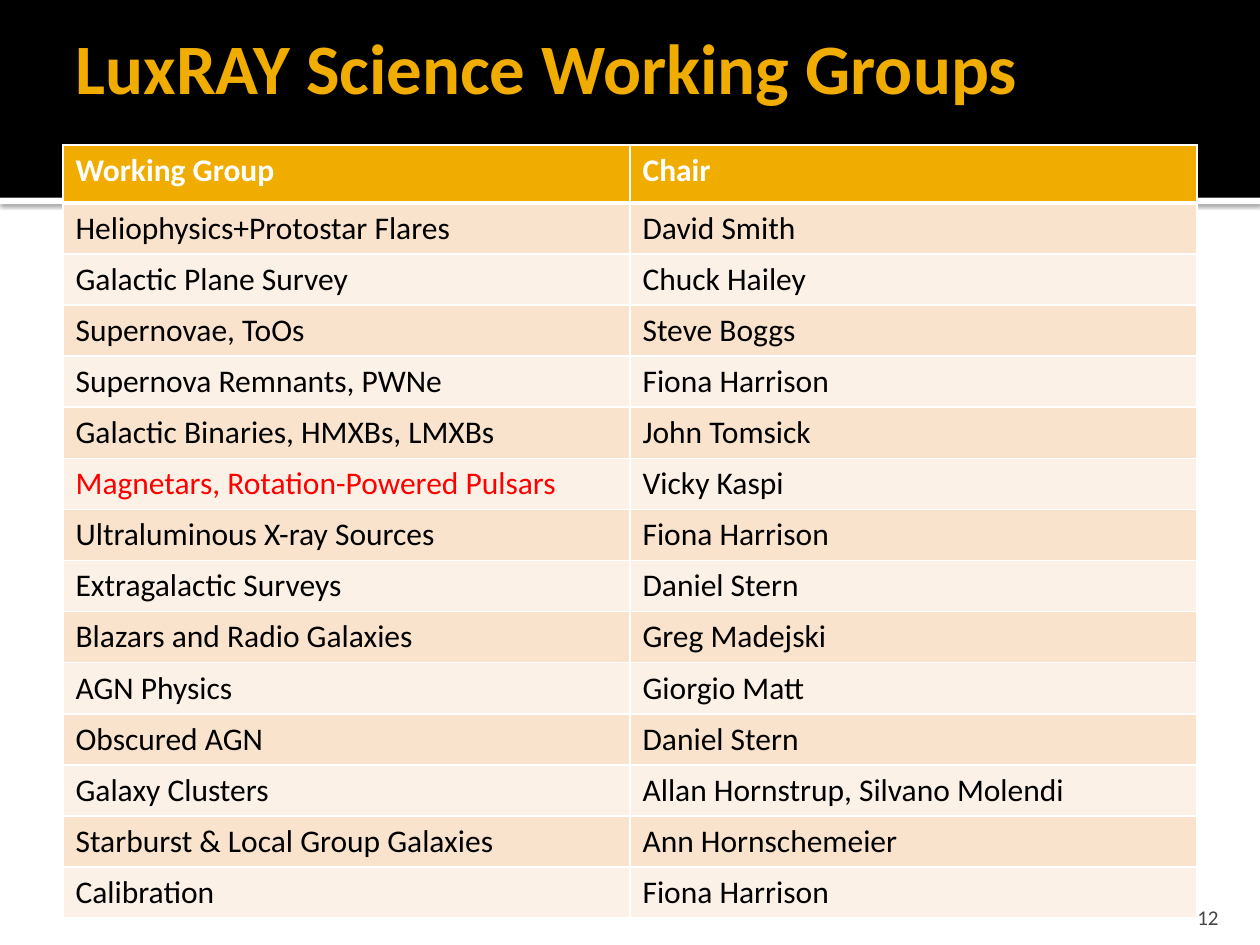
from lxml.etree import SubElement
from pptx import Presentation
from pptx.dml.color import RGBColor
from pptx.enum.shapes import MSO_SHAPE
from pptx.enum.text import MSO_ANCHOR, PP_ALIGN
from pptx.oxml import parse_xml
from pptx.oxml.ns import nsdecls, qn
from pptx.util import Inches, Pt

WHITE = RGBColor(0xFF, 0xFF, 0xFF)
BLACK = RGBColor(0x00, 0x00, 0x00)
GOLD = RGBColor(0xF0, 0xAD, 0x00)
PEACH = RGBColor(0xF9, 0xE3, 0xCC)
CREAM = RGBColor(0xFC, 0xF1, 0xE7)
RED = RGBColor(0xFF, 0x00, 0x00)
GREY = RGBColor(0x45, 0x45, 0x45)
FONT = "Calibri"

HEADER = ("Working Group", "Chair")
GROUPS = [
    ("Heliophysics+Protostar Flares", "David Smith"),
    ("Galactic Plane Survey", "Chuck Hailey"),
    ("Supernovae, ToOs", "Steve Boggs"),
    ("Supernova Remnants, PWNe", "Fiona Harrison"),
    ("Galactic Binaries, HMXBs, LMXBs", "John Tomsick"),
    ("Magnetars, Rotation-Powered Pulsars", "Vicky Kaspi"),
    ("Ultraluminous X-ray Sources", "Fiona Harrison"),
    ("Extragalactic Surveys", "Daniel Stern"),
    ("Blazars and Radio Galaxies", "Greg Madejski"),
    ("AGN Physics", "Giorgio Matt"),
    ("Obscured AGN", "Daniel Stern"),
    ("Galaxy Clusters", "Allan Hornstrup, Silvano Molendi"),
    ("Starburst & Local Group Galaxies", "Ann Hornschemeier"),
    ("Calibration", "Fiona Harrison"),
]
HIGHLIGHT = "Magnetars, Rotation-Powered Pulsars"


def box(left, top, width, height):
    return Inches(left), Inches(top), Inches(width), Inches(height)


def style(p, size, color, bold=False):
    p.font.name = FONT
    p.font.size = Pt(size)
    p.font.bold = bold
    p.font.color.rgb = color


def set_insets(tf, left, top, right, bottom):
    tf.margin_left, tf.margin_top = Inches(left), Inches(top)
    tf.margin_right, tf.margin_bottom = Inches(right), Inches(bottom)
    tf.word_wrap = True


def add_bar(s, area, color):
    sp = s.shapes.add_shape(MSO_SHAPE.RECTANGLE, *area)
    sp.shadow.inherit = False
    sp.fill.solid()
    sp.fill.fore_color.rgb = color
    sp.line.fill.background()
    return sp


def add_band(s, left, top, width, height):
    edge = height // 32
    strip = add_bar(s, (left, top + height - edge, width, edge), WHITE)
    effects = strip.element.spPr.find(qn("a:effectLst"))
    effects.append(parse_xml(
        f'<a:outerShdw {nsdecls("a")} blurRad="{Pt(2.5)}" dist="{Pt(0.8)}" '
        'dir="5400000" algn="t" rotWithShape="0"><a:srgbClr val="000000">'
        '<a:alpha val="60000"/></a:srgbClr></a:outerShdw>'))
    add_bar(s, (left, top, width, height - edge), BLACK)


def add_title(s, left, top, width, height):
    sp = s.shapes.title
    sp.left, sp.top, sp.width, sp.height = left, top, width, height
    sp.element.getparent().append(sp.element)
    tf = sp.text_frame
    tf.text = "LuxRAY Science Working Groups"
    tf.vertical_anchor = MSO_ANCHOR.MIDDLE
    set_insets(tf, 0.1, 0.05, 0.05, 0.05)
    p = tf.paragraphs[0]
    p.alignment = PP_ALIGN.LEFT
    style(p, 40.5, GOLD, True)


def set_borders(cell, top, bottom):
    tcPr = cell._tc.get_or_add_tcPr()
    for i, (side, width) in enumerate(zip("LRTB", (1, 1, top, bottom))):
        ln = SubElement(tcPr, qn(f"a:ln{side}"), w=str(Pt(width)))
        fill = SubElement(ln, qn("a:solidFill"))
        SubElement(fill, qn("a:srgbClr"), val=str(WHITE))
        tcPr.insert(i, ln)


def fill_cell(cell, text, fill, color, bold, top, bottom):
    cell.text = text
    style(cell.text_frame.paragraphs[0], 18, color, bold)
    cell.fill.solid()
    cell.fill.fore_color.rgb = fill
    set_borders(cell, top, bottom)


def add_groups_table(s, left, top, width, height):
    rows = [HEADER] + GROUPS
    table = s.shapes.add_table(len(rows), 2, left, top, width, height).table
    header_height = Inches(0.46)
    row_height = (height - header_height) // len(GROUPS)
    for i, texts in enumerate(rows):
        table.rows[i].height = row_height if i else header_height
        for j, text in enumerate(texts):
            cell = table.cell(i, j)
            if i == 0:
                fill_cell(cell, text, GOLD, WHITE, True, 1, 3)
            else:
                fill_cell(cell, text, PEACH if i % 2 else CREAM,
                          RED if text == HIGHLIGHT else BLACK, False,
                          3 if i == 1 else 1, 1)


def add_slide_number(s, left, top, width, height):
    tf = s.shapes.add_textbox(left, top, width, height).text_frame
    tf.text = "12"
    tf.vertical_anchor = MSO_ANCHOR.BOTTOM
    set_insets(tf, 0.1, 0.05, 0.1, 0)
    p = tf.paragraphs[0]
    p.alignment = PP_ALIGN.RIGHT
    style(p, 12, GREY)


def main():
    prs = Presentation()
    prs.slide_width, prs.slide_height = Inches(10), Inches(7.5)
    s = prs.slides.add_slide(prs.slide_layouts[5])
    add_band(s, *box(0, 0, 10, 1.62))
    add_title(s, *box(0.5, -0.16, 9, 1.37))
    add_groups_table(s, *box(0.5, 1.15, 9, 6.13))
    add_slide_number(s, *box(8.97, 7.08, 0.8, 0.3))
    prs.save("out.pptx")


if __name__ == "__main__":
    main()
